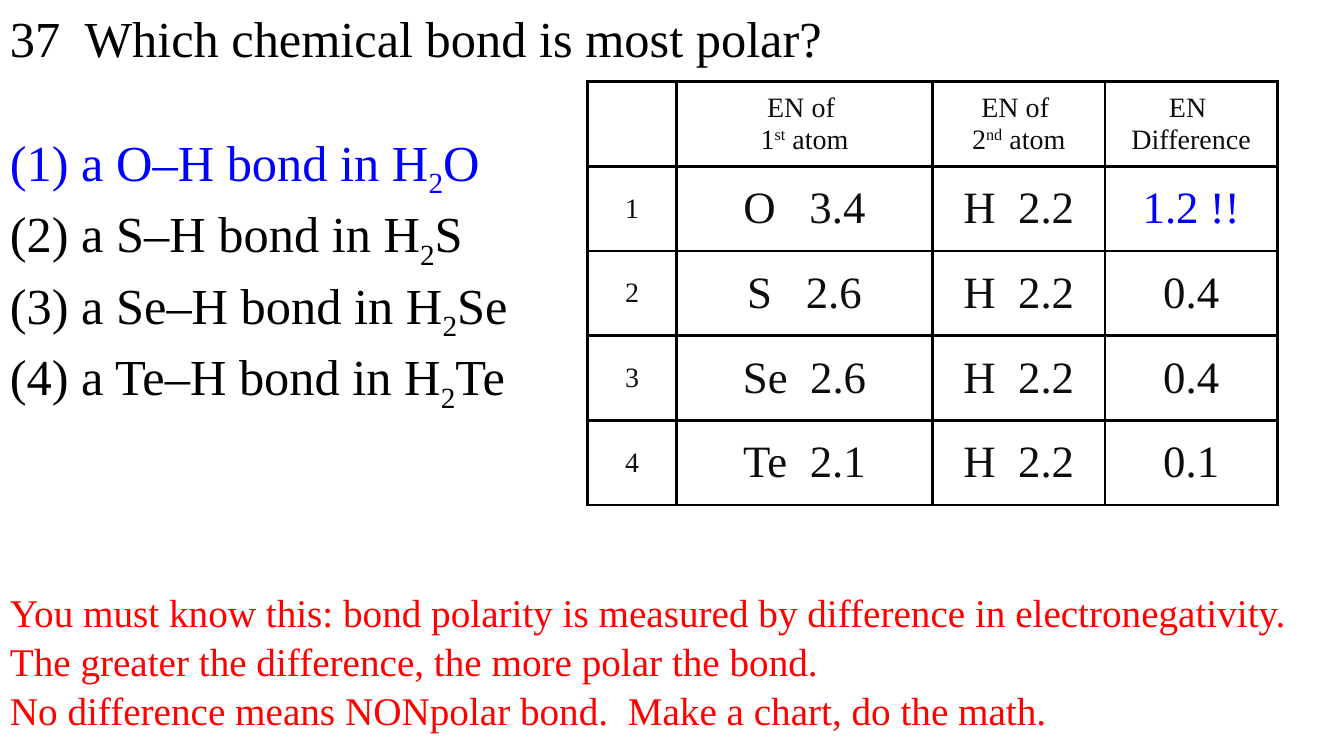
from lxml.etree import SubElement
from pptx import Presentation
from pptx.dml.color import RGBColor
from pptx.enum.text import MSO_ANCHOR, PP_ALIGN
from pptx.oxml.ns import qn
from pptx.util import Inches, Pt

FONT = "Times New Roman"
COLORS = {"black": "000000", "ink": "0D0D0D", "blue": "0000FF", "red": "FF0000"}
SUBSCRIPT, SUPERSCRIPT = -25000, 30000

QUESTION = "37  Which chemical bond is most polar? "
CHOICES = [
    "(1) a O–H bond in H|2|O ",
    "(2) a S–H bond in H|2|S ",
    "(3) a Se–H bond in H|2|Se ",
    "(4) a Te–H bond in H|2|Te",
]
EXPLANATION = [
    "You must know this: bond polarity is measured by difference in electronegativity.  "
    "The greater the difference, the more polar the bond.  ",
    "No difference means NONpolar bond.  Make a chart, do the math.",
]
COLUMN_WIDTHS = [0.88, 2.54, 1.71, 1.71]
ROW_HEIGHT = 0.84
HEADINGS = ["", "EN of \n1|st| atom", "EN of \n2|nd| atom", "EN \nDifference"]
BONDS = [
    ["1", "O   3.4", "H  2.2", "1.2 !!"],
    ["2", "S   2.6", "H  2.2", "0.4"],
    ["3", "Se  2.6", "H  2.2", "0.4"],
    ["4", "Te  2.1", "H  2.2", "0.1"],
]


def write(para, text, size, color="black", shift=SUBSCRIPT):
    """Fill a paragraph; parts between bars are shifted off the baseline."""
    for line_number, line in enumerate(text.split("\n")):
        if line_number:
            para.add_line_break()
        for part_number, part in enumerate(line.split("|")):
            span = para.add_run()
            span.text = part
            span.font.name = FONT
            span.font.size = Pt(size)
            span.font.color.rgb = RGBColor.from_string(COLORS[color])
            if part_number % 2:
                span._r.get_or_add_rPr().set("baseline", str(shift))


def add_text(page, top, height, lines, size):
    """Add a full-width box from (text, color, space after) lines."""
    box = page.shapes.add_textbox(Inches(0), Inches(top), Inches(13.33), Inches(height))
    frame = box.text_frame
    frame.word_wrap = True
    for number, (text, color, gap) in enumerate(lines):
        para = frame.add_paragraph() if number else frame.paragraphs[0]
        para.line_spacing = 1.04
        para.space_after = Pt(gap)
        write(para, text, size, color=color)


def set_borders(cell, width=2.25):
    properties = cell._tc.get_or_add_tcPr()
    for side in ("lnL", "lnR", "lnT", "lnB"):
        line = SubElement(properties, qn(f"a:{side}"), w=str(Pt(width)))
        fill = SubElement(line, qn("a:solidFill"))
        SubElement(fill, qn("a:srgbClr"), val=COLORS["black"])


def add_bond_table(page, left, top):
    rows = [HEADINGS] + BONDS
    table = page.shapes.add_table(
        len(rows), len(COLUMN_WIDTHS), Inches(left), Inches(top),
        Inches(sum(COLUMN_WIDTHS)), Inches(ROW_HEIGHT * len(rows)),
    ).table
    for column, width in zip(table.columns, COLUMN_WIDTHS):
        column.width = Inches(width)
    for row_number, row in enumerate(rows):
        table.rows[row_number].height = Inches(ROW_HEIGHT)
        for column_number, text in enumerate(row):
            cell = table.cell(row_number, column_number)
            set_borders(cell)
            cell.fill.background()
            cell.vertical_anchor = MSO_ANCHOR.MIDDLE
            if not text:
                continue
            para = cell.text_frame.paragraphs[0]
            para.alignment = PP_ALIGN.CENTER
            is_label = row_number == 0 or column_number == 0
            write(
                para, text, 20 if is_label else 32,
                color="blue" if text == "1.2 !!" else "ink",
                shift=SUPERSCRIPT,
            )


def main():
    deck = Presentation()
    deck.slide_width, deck.slide_height = Inches(13.33), Inches(7.5)
    page = deck.slides.add_slide(deck.slide_layouts[6])
    choices = [
        (text, "black" if number else "blue", 0) for number, text in enumerate(CHOICES)
    ]
    add_text(page, 0, 3.74, [(QUESTION, "black", 43)] + choices, 36)
    add_text(page, 5.77, 1.51, [(text, "red", 0) for text in EXPLANATION], 28)
    add_bond_table(page, 5.83, 0.81)
    deck.save("out.pptx")


if __name__ == "__main__":
    main()
